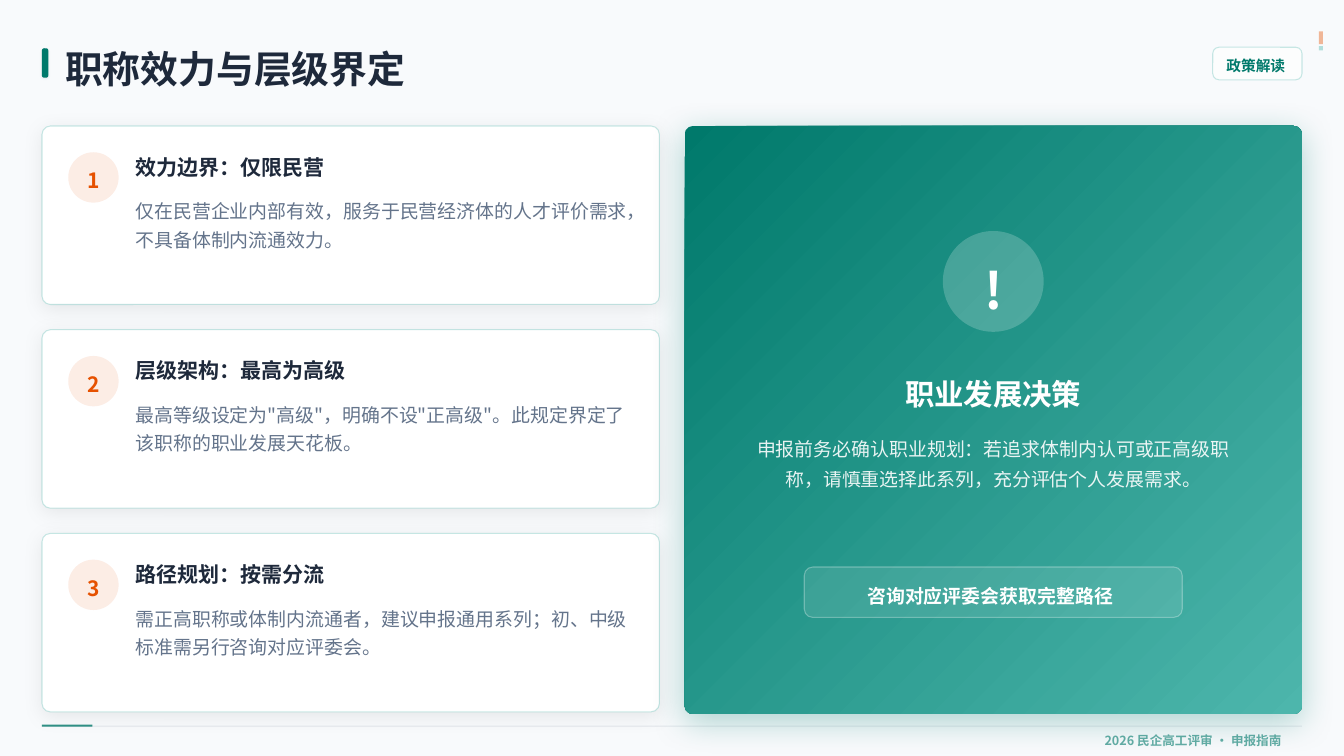
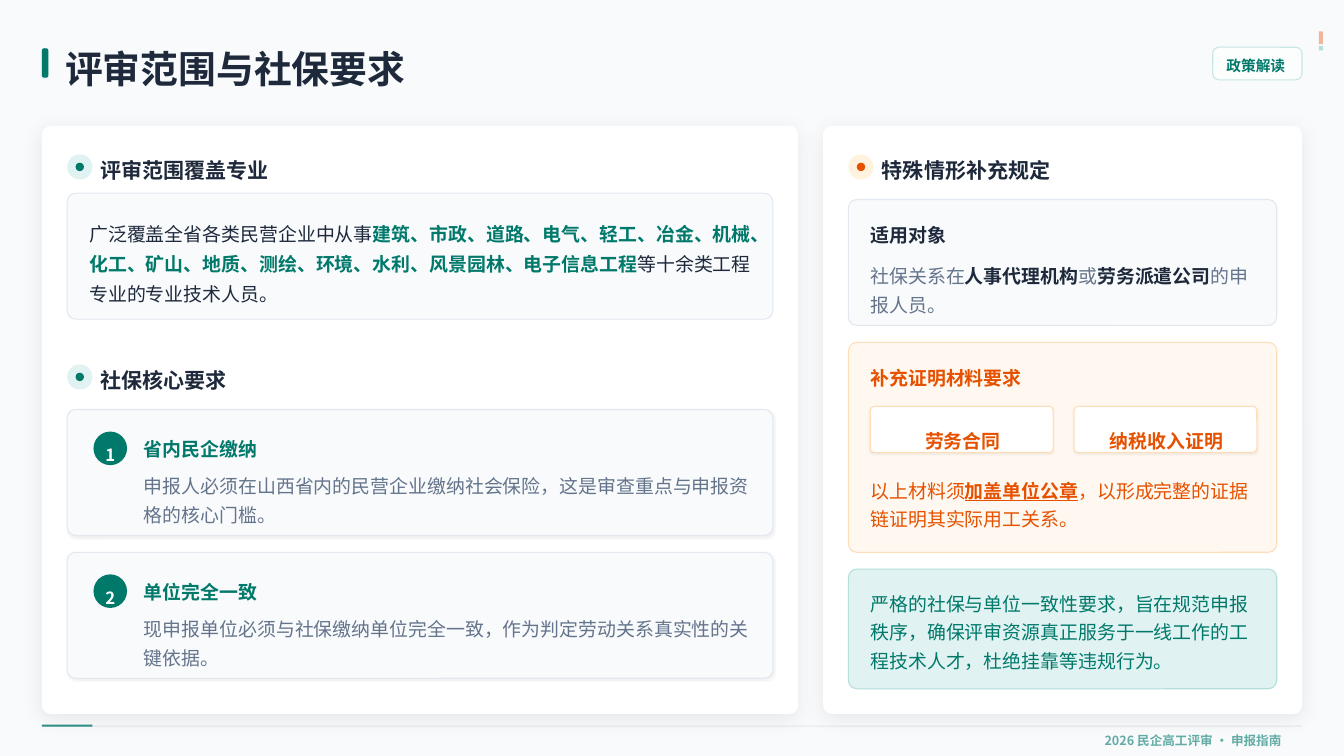
from lxml import etree
from pptx import Presentation
from pptx.dml.color import RGBColor
from pptx.enum.shapes import MSO_SHAPE
from pptx.enum.text import MSO_ANCHOR, PP_ALIGN
from pptx.oxml.ns import qn
from pptx.util import Pt

RECT, ROUND = MSO_SHAPE.RECTANGLE, MSO_SHAPE.ROUNDED_RECTANGLE
LEFT, CENTER = PP_ALIGN.LEFT, PP_ALIGN.CENTER
TOP, MIDDLE = MSO_ANCHOR.TOP, MSO_ANCHOR.MIDDLE

COLS, ROWS = 1280, 720
MARGIN, PANEL_TOP, PANEL_H = 40, 120, 560
FONT = "Noto Sans CJK SC"
TEAL, MINT, PALE_TEAL = "00796B", "4DB6AC", "E0F2F1"
ORANGE, PALE_ORANGE, PEACH, PEACH_EDGE = "E65100", "FFF3E0", "FFF8F0", "FFDDB8"
INK, SLATE, PAPER, EDGE, WHITE = "1E293B", "64748B", "F8FAFC", "E2E8F0", "FFFFFF"
SOFT = ("000000", 8, 20, 4)
CRISP = ("000000", 5, 2, 1)
GLOW = (TEAL, 30, 32, 8)


def paint(fill, colour, props):
    code, _, alpha = colour.partition("@")
    fill.solid()
    fill.fore_color.rgb = RGBColor.from_string(code)
    if alpha:
        clr = props.find(qn("a:solidFill"))[0]
        etree.SubElement(clr, qn("a:alpha"), val=str(int(alpha) * 1000))


def cast_shadow(sp, colour, alpha, blur, dist):
    effects = sp._element.spPr.find(qn("a:effectLst"))
    shadow = etree.SubElement(effects, qn("a:outerShdw"), blurRad=str(Pt(blur)),
                              dist=str(Pt(dist)), dir="5400000", rotWithShape="0")
    clr = etree.SubElement(shadow, qn("a:srgbClr"), val=colour)
    etree.SubElement(clr, qn("a:alpha"), val=str(alpha * 1000))


def box(s, x, y, w, h, fill, line=None, radius=8, shadow=None):
    sp = s.shapes.add_shape(ROUND if radius else RECT, Pt(x), Pt(y), Pt(w), Pt(h))
    if radius:
        sp.adjustments[0] = radius / min(w, h)
    sp.shadow.inherit = False
    props = sp._element.spPr
    if isinstance(fill, tuple):
        sp.fill.gradient()
        sp.fill.gradient_angle = 315
        for stop, colour in zip(sp.fill.gradient_stops, fill):
            stop.color.rgb = RGBColor.from_string(colour)
    else:
        paint(sp.fill, fill, props)
    if line:
        sp.line.width = Pt(1)
        paint(sp.line.fill, line, props.find(qn("a:ln")))
    else:
        sp.line.fill.background()
    if shadow:
        cast_shadow(sp, *shadow)
    return sp


def disc(s, x, y, d, fill):
    return box(s, x, y, d, d, fill, radius=d / 2)


def write(sp, content, size, colour, bold=False, spacing=1.25, align=LEFT, anchor=TOP):
    tf = sp.text_frame
    tf.word_wrap = True
    tf.vertical_anchor = anchor
    tf.margin_left = tf.margin_top = tf.margin_right = tf.margin_bottom = 0
    p = tf.paragraphs[0]
    p.alignment = align
    p.line_spacing = spacing
    p.font.size = Pt(size)
    p.font.name = FONT
    props = p._p.pPr.find(qn("a:defRPr"))
    east = etree.Element(qn("a:ea"), typeface=FONT)
    props.find(qn("a:latin")).addnext(east)
    paint(p.font.fill, colour, props)
    if isinstance(content, str):
        p.font.bold = bold
        p.add_run().text = content
        return
    for words, accent, underline in content:
        r = p.add_run()
        r.text = words
        r.font.bold = accent is not None
        if accent:
            r.font.color.rgb = RGBColor.from_string(accent)
        if underline:
            r.font.underline = True


def text(s, x, y, w, h, content, size, colour, **style):
    sp = s.shapes.add_textbox(Pt(x), Pt(y), Pt(w), Pt(h))
    write(sp, content, size, colour, **style)


def subhead(s, x, y, w, words, colour):
    text(s, x, y, w, 24, words, 18, colour, bold=True, spacing=1.08)


def section(s, x, y, w, words, dot, halo):
    disc(s, x, y + 3, 24, halo)
    disc(s, x + 8, y + 11, 8, dot)
    text(s, x + 32, y, w, 30, words, 20, INK, bold=True)


def base_slide(prs, title):
    s = prs.slides.add_slide(prs.slide_layouts[5])
    s.background.fill.solid()
    s.background.fill.fore_color.rgb = RGBColor.from_string(PAPER)
    box(s, MARGIN, 691, COLS - 2 * MARGIN, 1, SLATE + "@15", radius=0)
    box(s, MARGIN, 690, 48, 2, TEAL + "@80", radius=0)
    text(s, 1052, 694, 207, 18, "2026 民企高工评审 · 申报指南", 12, TEAL + "@60", bold=True)
    box(s, 1256, 30, 4, 12, ORANGE + "@40", radius=0)
    box(s, 1256, 44, 4, 4, MINT + "@40", radius=0)
    box(s, MARGIN, 46, 6, 28, TEAL, radius=2, shadow=CRISP)
    sp = s.shapes.title
    sp.left, sp.top, sp.width, sp.height = Pt(62), Pt(33), Pt(1132), Pt(54)
    write(sp, title, 36, INK, bold=True)
    box(s, 1155, 45, 85, 31, WHITE + "@60", MINT + "@30", radius=6)
    text(s, 1168, 50, 80, 21, "政策解读", 14, TEAL, bold=True)
    return s


def numbered_card(s, y, number, head, body):
    box(s, MARGIN, y, 588, 170, WHITE, MINT + "@30", shadow=SOFT)
    disc(s, 65, y + 25, 48, ORANGE + "@10")
    text(s, 83.5, y + 34, 42, 30, str(number), 20, ORANGE, bold=True)
    text(s, 129, y + 25, 506, 28, head, 20, INK, bold=True, spacing=1.08)
    text(s, 129, y + 65, 476, 82, body, 18, SLATE)


def requirement(s, y, number, head, body):
    box(s, 64, y, 672, 120, PAPER, EDGE, shadow=CRISP)
    sp = disc(s, 89, y + 21, 32, TEAL)
    write(sp, str(number), 16, WHITE, bold=True, spacing=1.67, align=CENTER, anchor=MIDDLE)
    subhead(s, 137, y + 25, 603, head, TEAL)
    text(s, 137, y + 57, 576, 54, body, 18, SLATE)


def chip(s, x, y, words):
    box(s, x, y, 174, 44, WHITE, PEACH_EDGE, radius=4, shadow=CRISP)
    text(s, x + 1, y + 1, 174, 44, words, 18, ORANGE, bold=True, spacing=2, align=CENTER)


def validity_slide(prs):
    s = base_slide(prs, "职称效力与层级界定")
    cards = [
        ("效力边界：仅限民营",
         "仅在民营企业内部有效，服务于民营经济体的人才评价需求，不具备体制内流通效力。"),
        ("层级架构：最高为高级",
         '最高等级设定为"高级"，明确不设"正高级"。此规定界定了该职称的职业发展天花板。'),
        ("路径规划：按需分流",
         "需正高职称或体制内流通者，建议申报通用系列；初、中级标准需另行咨询对应评委会。"),
    ]
    for i, (head, body) in enumerate(cards):
        numbered_card(s, PANEL_TOP + 194 * i, i + 1, head, body)

    box(s, 652, PANEL_TOP, 588, PANEL_H, (TEAL, MINT), shadow=GLOW)
    disc(s, 898, 220, 96, WHITE + "@20")
    text(s, 938, 232, 88, 72, "!", 48, WHITE, bold=True)
    text(s, 696, 350, 500, 42, "职业发展决策", 28, WHITE, bold=True, align=CENTER)
    text(s, 716, 410, 460, 58,
         "申报前务必确认职业规划：若追求体制内认可或正高级职称，请慎重选择此系列，充分评估个人发展需求。",
         18, WHITE + "@90", spacing=1.33, align=CENTER)
    box(s, 766, 540, 360, 48, WHITE + "@10", WHITE + "@30")
    text(s, 826, 551, 267, 27, "咨询对应评委会获取完整路径", 18, WHITE, bold=True)


def scope_slide(prs):
    s = base_slide(prs, "评审范围与社保要求")
    box(s, MARGIN, PANEL_TOP, 720, PANEL_H, WHITE, shadow=SOFT)
    section(s, 64, 144, 670, "评审范围覆盖专业", TEAL, PALE_TEAL)
    box(s, 64, 184, 672, 120, PAPER, EDGE)
    text(s, 85, 205, 632, 80, [
        ("广泛覆盖全省各类民营企业中从事", None, False),
        ("建筑、市政、道路、电气、轻工、冶金、机械、化工、矿山、地质、测绘、环境、水利、"
         "风景园林、电子信息工程", TEAL, False),
        ("等十余类工程专业的专业技术人员。", None, False),
    ], 18, INK, spacing=1.33)
    section(s, 64, 344, 670, "社保核心要求", TEAL, PALE_TEAL)
    requirements = [
        ("省内民企缴纳",
         "申报人必须在山西省内的民营企业缴纳社会保险，这是审查重点与申报资格的核心门槛。"),
        ("单位完全一致",
         "现申报单位必须与社保缴纳单位完全一致，作为判定劳动关系真实性的关键依据。"),
    ]
    for i, (head, body) in enumerate(requirements):
        requirement(s, 390 + 136 * i, i + 1, head, body)

    box(s, 784, PANEL_TOP, 456, PANEL_H, WHITE, shadow=SOFT)
    section(s, 808, 144, 406, "特殊情形补充规定", ORANGE, PALE_ORANGE)
    box(s, 808, 190, 408, 120, PAPER, EDGE)
    subhead(s, 829, 211, 395, "适用对象", INK)
    text(s, 829, 247, 368, 54, [
        ("社保关系在", None, False),
        ("人事代理机构", INK, False),
        ("或", None, False),
        ("劳务派遣公司", INK, False),
        ("的申报人员。", None, False),
    ], 18, SLATE)
    box(s, 808, 326, 408, 200, PEACH, PEACH_EDGE)
    subhead(s, 829, 347, 395, "补充证明材料要求", ORANGE)
    for i, words in enumerate(["劳务合同", "纳税收入证明"]):
        chip(s, 829 + 194 * i, 387, words)
    text(s, 829, 451, 368, 54, [
        ("以上材料须", None, False),
        ("加盖单位公章", ORANGE, True),
        ("，以形成完整的证据链证明其实际用工关系。", None, False),
    ], 18, ORANGE)
    box(s, 808, 542, 408, 114, PALE_TEAL, "B2DFDB")
    text(s, 829, 559, 368, 81,
         "严格的社保与单位一致性要求，旨在规范申报秩序，确保评审资源真正服务于一线工作的工程技术人才，"
         "杜绝挂靠等违规行为。", 18, TEAL)


def main():
    prs = Presentation()
    prs.slide_width, prs.slide_height = Pt(COLS), Pt(ROWS)
    validity_slide(prs)
    scope_slide(prs)
    prs.save("out.pptx")


if __name__ == "__main__":
    main()
